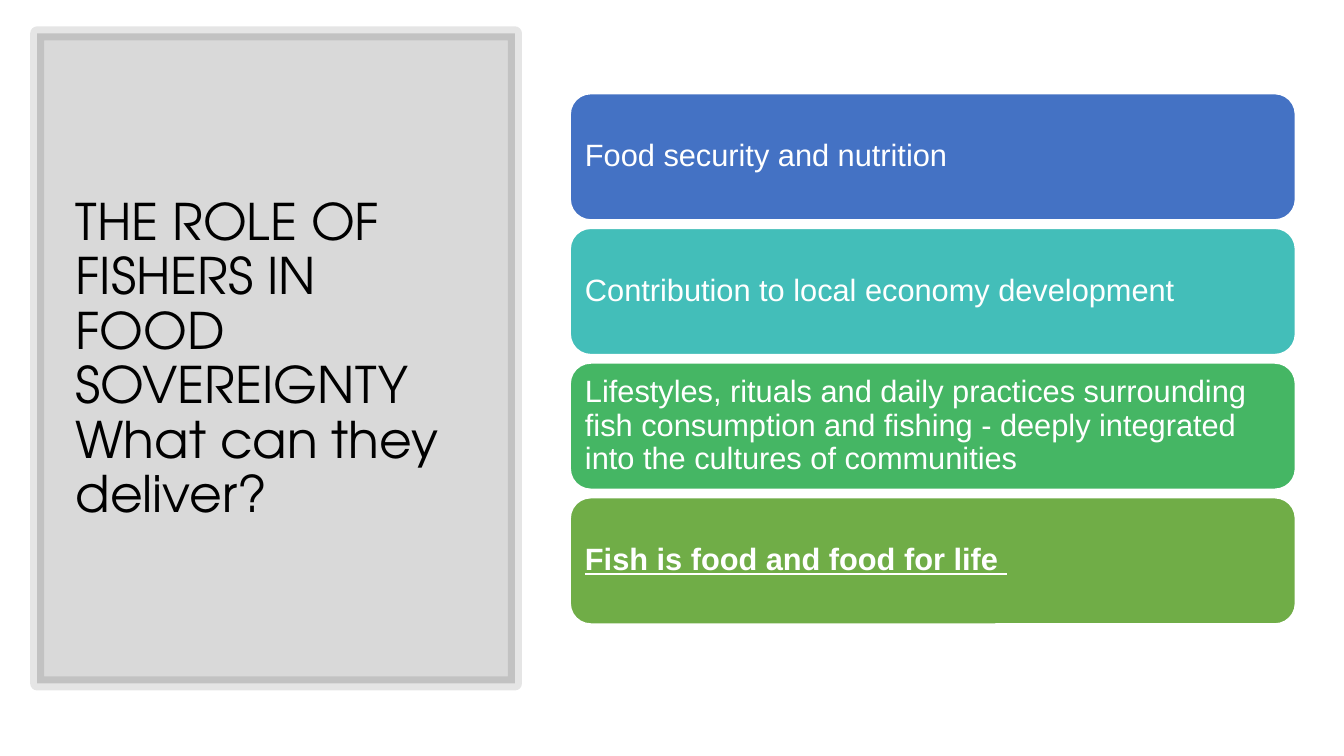
import pptx
import pptx.dml.color
import pptx.enum.shapes
import pptx.enum.text
import pptx.oxml
import pptx.oxml.ns
import pptx.util

Pt = pptx.util.Pt
RGBColor = pptx.dml.color.RGBColor
SHAPES = pptx.enum.shapes.MSO_SHAPE

BLACK = RGBColor(0x00, 0x00, 0x00)
WHITE = RGBColor(0xFF, 0xFF, 0xFF)
BLUE = RGBColor(0x44, 0x72, 0xC4)
TEAL = RGBColor(0x43, 0xBE, 0xB9)
GREEN = RGBColor(0x45, 0xB6, 0x64)
OLIVE = RGBColor(0x70, 0xAD, 0x47)

TITLE = "THE ROLE OF FISHERS IN FOOD SOVEREIGNTY \vWhat can they deliver?"
TITLE_FONT = {"name": "TeX Gyre Adventor", "size": Pt(36)}
CARD_FONT = {"name": "Arial", "size": Pt(22)}
EMPHASIS = {"bold": True, "underline": True}
CARDS = [
    ("Food security and nutrition", BLUE, {}),
    ("Contribution to local economy development", TEAL, {}),
    ("Lifestyles, rituals and daily practices surrounding ﬁsh consumption "
     "and ﬁshing - deeply integrated into the cultures of communities", GREEN, {}),
    ("Fish is food and food for life ", OLIVE, EMPHASIS),
]
CARD_LEFT, CARD_TOP, CARD_WIDTH, CARD_HEIGHT = 406.8, 66.4, 519, 91.2
CARD_PITCH = 96.2


def set_attributes(target, values):
    for name, value in values.items():
        setattr(target, name, value)


def add_box(slide, kind, box, fill, line, line_width):
    shape = slide.shapes.add_shape(kind, *map(Pt, box))
    shape.shadow.inherit = False
    shape.fill.solid()
    shape.fill.fore_color.rgb = fill
    shape.line.color.rgb = line
    shape.line.width = Pt(line_width)
    return shape


def set_opacity(shape, percent):
    for color in shape.element.spPr.iter(pptx.oxml.ns.qn("a:srgbClr")):
        color.append(pptx.oxml.parse_xml(
            f'<a:alpha {pptx.oxml.ns.nsdecls("a")} val="{percent[0] * 1000}"/>'))
        percent = percent[1:]


def write_text(shape, text, font, color, insets, space_after=0):
    frame = shape.text_frame
    frame.text = text
    set_attributes(frame, {
        "word_wrap": True,
        "auto_size": pptx.enum.text.MSO_AUTO_SIZE.NONE,
        "vertical_anchor": pptx.enum.text.MSO_ANCHOR.MIDDLE,
        "margin_left": Pt(insets[0]),
        "margin_right": Pt(insets[0]),
        "margin_top": Pt(insets[1]),
        "margin_bottom": Pt(insets[1]),
    })
    paragraph = frame.paragraphs[0]
    set_attributes(paragraph, {
        "alignment": pptx.enum.text.PP_ALIGN.LEFT,
        "line_spacing": 0.9,
        "space_before": Pt(0),
        "space_after": Pt(space_after),
    })
    for run in paragraph.runs:
        set_attributes(run.font, font)
        run.font.color.rgb = color


def add_panel(slide):
    panel = add_box(slide, SHAPES.RECTANGLE, (26.6, 23.8, 341.3, 464.4),
                    BLACK, BLACK, 10)
    set_opacity(panel, (15, 10))
    slide.shapes.title.element.addprevious(panel.element)


def add_title(slide):
    title = slide.shapes.title
    set_attributes(title, {"left": Pt(46.8), "top": Pt(50.4),
                           "width": Pt(299.5), "height": Pt(414)})
    write_text(title, TITLE, TITLE_FONT, BLACK, (7.2, 3.6))


def add_card(slide, index, text, color, emphasis):
    box = (CARD_LEFT, CARD_TOP + index * CARD_PITCH, CARD_WIDTH, CARD_HEIGHT)
    card = add_box(slide, SHAPES.ROUNDED_RECTANGLE, box, color, WHITE, 2)
    write_text(card, text, {**CARD_FONT, **emphasis}, WHITE, (6.6, 6.6), 7.7)


def main():
    presentation = pptx.Presentation()
    presentation.slide_width = Pt(960)
    presentation.slide_height = Pt(540)
    slide = presentation.slides.add_slide(presentation.slide_layouts[5])
    add_panel(slide)
    add_title(slide)
    for index, (text, color, emphasis) in enumerate(CARDS):
        add_card(slide, index, text, color, emphasis)
    presentation.save("out.pptx")


if __name__ == "__main__":
    main()
